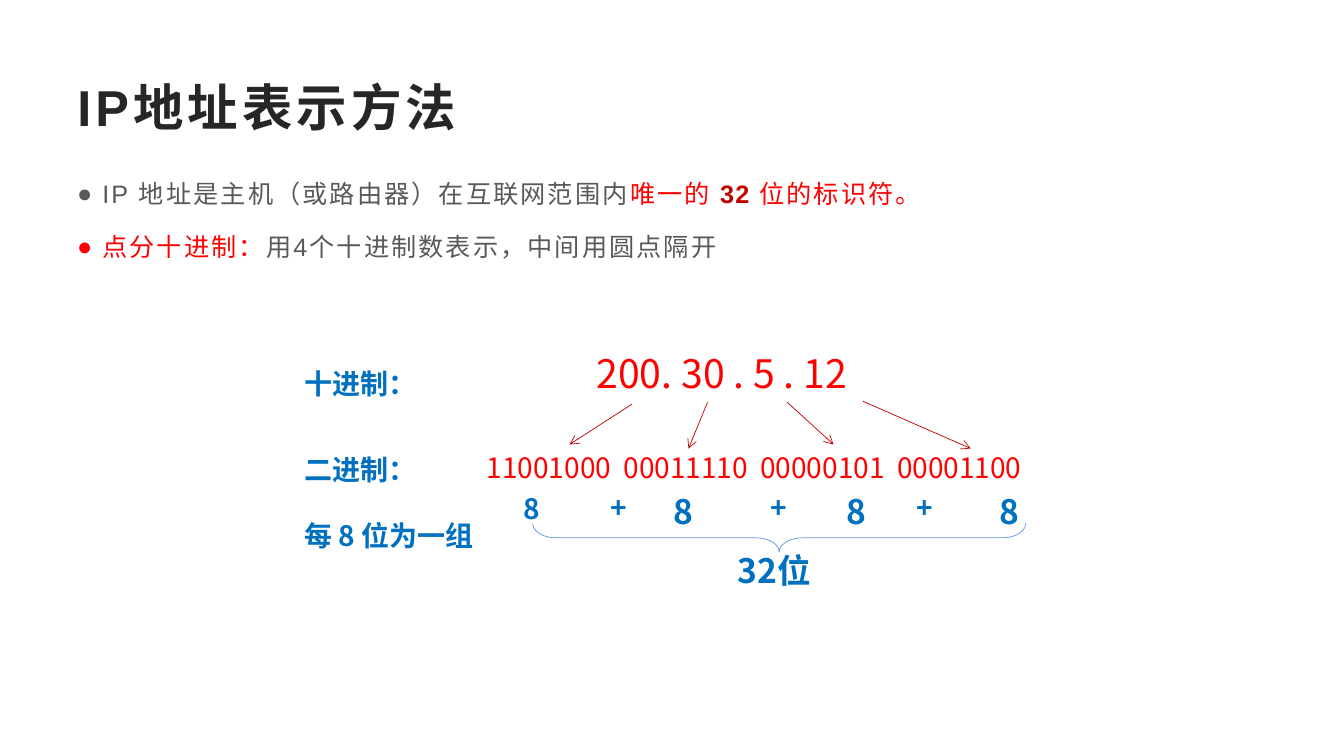
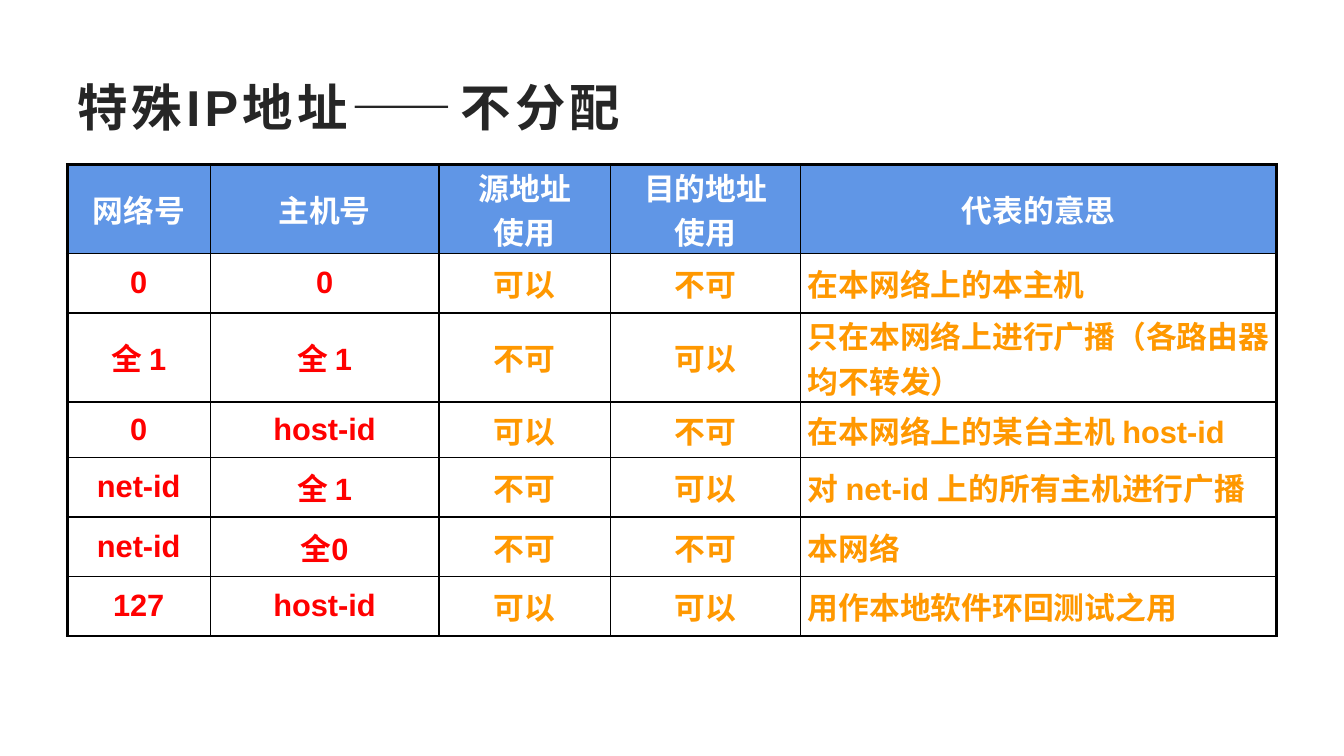
from lxml.etree import SubElement
from pptx import Presentation
from pptx.dml.color import RGBColor
from pptx.enum.shapes import MSO_CONNECTOR, MSO_SHAPE
from pptx.enum.text import MSO_ANCHOR, PP_ALIGN
from pptx.oxml.ns import qn
from pptx.util import Pt

RED, DARK_RED, BLUE, ORANGE = "FF0000", "C00000", "0070C0", "FF9800"
ACCENT, INK, GREY, WHITE, BLACK = "6096E6", "262626", "595959", "FFFFFF", "000000"
LATIN, CJK = "Arial", "Noto Sans CJK SC"
LEFT, CONTENT_TOP, CONTENT_W = 48, 117.4, 864

# Slide 1: each bullet is a list of (text, format)
BULLETS = [
    [("IP 地址是主机（或路由器）在互联网范围内", {"color": GREY}),
     ("唯一的 ", {"color": RED}),
     ("32 ", {"color": DARK_RED, "bold": True, "spacing": 1}),
     ("位的标识符。", {"color": RED})],
    [("点分十进制：", {"color": RED}),
     ("用4个十进制数表示，中间用圆点隔开", {"color": GREY})],
]
OCTETS = ["11001000", "00011110", "00000101", "00001100"]
OCTET_PITCH = 97.7
RED_TEXT = {"latin": CJK, "color": RED}
BLUE_TEXT = {"latin": CJK, "color": BLUE, "bold": True}
ROW_LABELS = [("十进制：", 246.2), ("二进制：", 307.4)]
# text, left, top, width, size
SUM_PARTS = [
    ("8", 366.5, 347.8, 35, 20), ("+", 429, 347, 35, 20),
    ("8", 473.8, 347, 70, 24), ("+", 543, 347, 35, 20),
    ("8", 597.6, 347, 35, 24), ("+", 647.3, 347, 35, 20),
    ("8", 707, 347, 35, 24), ("32位", 519.8, 389.5, 96, 24),
]
ARROWS = [
    (451.4, 288.7, 406.8, 317.5), (505.4, 287.3, 491.8, 320.4),
    (562.3, 287.3, 595.4, 317.5), (616.3, 286.6, 693.4, 320.4),
]

# Slide 2
HEADER = ["网络号", "主机号", "源地址\n使用", "目的地址\n使用", "代表的意思"]
ROWS = [
    ["0", "0", "可以", "不可", "在本网络上的本主机"],
    ["全 1", "全 1", "不可", "可以", "只在本网络上进行广播（各路由器均不转发）"],
    ["0", "host-id", "可以", "不可", "在本网络上的某台主机 host-id"],
    ["net-id", "全 1", "不可", "可以", "对 net-id 上的所有主机进行广播"],
    ["net-id", "全0", "不可", "不可", "本网络"],
    ["127", "host-id", "可以", "可以", "用作本地软件环回测试之用"],
]
COL_WIDTHS = [102.2, 163.4, 122.4, 136.1, 339.9]
ROW_HEIGHTS = [52.6, 42.5, 44.6, 39.6, 42.5, 42.5, 42.5]
COLUMN_COLORS = [RED, RED, ORANGE, ORANGE, ORANGE]


def rgb(value):
    return RGBColor.from_string(value)


def format_run(r, size, color, bold=False, latin=LATIN, spacing=0):
    for name, value in {"size": Pt(size), "bold": bold, "name": latin}.items():
        setattr(r.font, name, value)
    r.font.color.rgb = rgb(color)
    rPr = r.font._element
    if spacing:
        rPr.set("spc", str(round(spacing * 100)))
    SubElement(rPr, qn("a:ea"), typeface=CJK)


def add_run(p, text, **fmt):
    r = p.add_run()
    r.text = text
    format_run(r, **fmt)


def add_text(s, text, left, top, width, height, wrap=True, align=PP_ALIGN.LEFT,
             line_spacing=1, **fmt):
    tf = s.shapes.add_textbox(Pt(left), Pt(top), Pt(width), Pt(height)).text_frame
    tf.word_wrap = wrap
    p = tf.paragraphs[0]
    p.alignment, p.line_spacing = align, line_spacing
    add_run(p, text, **fmt)
    return p


def add_titled_slide(prs, text):
    s = prs.slides.add_slide(prs.slide_layouts[5])
    title = s.shapes.title
    box = {"left": LEFT, "top": 48, "width": CONTENT_W, "height": 55.4}
    for name, value in box.items():
        setattr(title, name, Pt(value))
    tf = title.text_frame
    tf.vertical_anchor = MSO_ANCHOR.MIDDLE
    p = tf.paragraphs[0]
    p.alignment = PP_ALIGN.LEFT
    add_run(p, text, size=36, color=INK, bold=True, spacing=3)
    return s


def add_bullets(s):
    tf = s.shapes.add_textbox(Pt(LEFT), Pt(CONTENT_TOP), Pt(CONTENT_W), Pt(374)).text_frame
    tf.word_wrap = True
    for i, parts in enumerate(BULLETS):
        p = tf.add_paragraph() if i else tf.paragraphs[0]
        p.line_spacing, p.space_after = 1.3, Pt(10)
        pPr = p._p.get_or_add_pPr()
        pPr.set("marL", str(Pt(18)))
        pPr.set("indent", str(-Pt(18)))
        SubElement(pPr, qn("a:buFont"), typeface=LATIN)
        SubElement(pPr, qn("a:buChar"), char="●")
        for text, fmt in parts:
            add_run(p, text, **{"size": 18, "spacing": 1.5, **fmt})


def add_arrow(s, x1, y1, x2, y2):
    line = s.shapes.add_connector(MSO_CONNECTOR.STRAIGHT, Pt(x1), Pt(y1), Pt(x2), Pt(y2))
    line.line.color.rgb = rgb(DARK_RED)
    line.line.width = Pt(0.5)
    SubElement(line.line._get_or_add_ln(), qn("a:tailEnd"), type="arrow")
    SubElement(line._element.spPr, qn("a:effectLst"))


def add_brace(s):
    brace = s.shapes.add_shape(MSO_SHAPE.LEFT_BRACE, Pt(546.5), Pt(208.1), Pt(20.2), Pt(352.1))
    brace.rotation = 270
    brace.adjustments[0], brace.adjustments[1] = 0.83, 0.5
    brace.shadow.inherit = False
    brace.fill.background()
    brace.line.color.rgb = rgb(ACCENT)
    brace.line.width = Pt(0.5)


def add_octets(s):
    p = add_text(s, "\t".join(OCTETS), 340.6, 318.2, 440, 31.7, size=20, **RED_TEXT)
    tabs = SubElement(p._p.get_or_add_pPr(), qn("a:tabLst"))
    for i in range(1, len(OCTETS)):
        SubElement(tabs, qn("a:tab"), pos=str(Pt(OCTET_PITCH * i)), algn="l")


def build_notation(prs):
    s = add_titled_slide(prs, "IP地址表示方法")
    add_bullets(s)
    add_octets(s)
    add_text(s, "200. 30 . 5 . 12", 419, 246.2, 237.6, 41, size=28, **RED_TEXT)
    for arrow in ARROWS:
        add_arrow(s, *arrow)
    for text, left, top, width, size in SUM_PARTS:
        add_text(s, text, left, top, width, size * 1.5, size=size, **BLUE_TEXT)
    add_brace(s)
    for text, top in ROW_LABELS:
        add_text(s, text, 210.2, top, 125.3, 40, line_spacing=1.5, size=20, **BLUE_TEXT)
    add_text(s, "每 8 位为一组", 178.6, 366.5, 198.7, 46, wrap=False,
             align=PP_ALIGN.CENTER, size=20, **BLUE_TEXT)


def set_borders(cell, outer):
    """Draw all four sides, thicker on those named in outer."""
    tcPr = cell._tc.get_or_add_tcPr()
    for side in "LRTB":
        ln = SubElement(tcPr, qn(f"a:ln{side}"), w=str(Pt(2.25 if side in outer else 1)))
        SubElement(SubElement(ln, qn("a:solidFill")), qn("a:srgbClr"), val=BLACK)


def build_special_addresses(prs):
    s = add_titled_slide(prs, "特殊IP地址——不分配")
    grid = [HEADER] + ROWS
    last_row, last_col = len(grid) - 1, len(HEADER) - 1
    table = s.shapes.add_table(len(grid), len(HEADER), Pt(LEFT), Pt(CONTENT_TOP),
                               Pt(CONTENT_W), Pt(sum(ROW_HEIGHTS))).table
    for column, width in zip(table.columns, COL_WIDTHS):
        column.width = Pt(width)
    for row, height in zip(table.rows, ROW_HEIGHTS):
        row.height = Pt(height)
    for i, texts in enumerate(grid):
        for j, text in enumerate(texts):
            cell = table.cell(i, j)
            edges = {"L": j == 0, "R": j == last_col, "T": i == 0, "B": i == last_row}
            set_borders(cell, [side for side, on_edge in edges.items() if on_edge])
            if i == 0:
                cell.fill.solid()
                cell.fill.fore_color.rgb = rgb(ACCENT)
            else:
                cell.fill.background()
            cell.vertical_anchor = MSO_ANCHOR.MIDDLE
            cell.margin_left = cell.margin_right = Pt(5)
            cell.margin_top = cell.margin_bottom = 0
            cell.text = text
            for p in cell.text_frame.paragraphs:
                p.alignment = PP_ALIGN.LEFT if i and j == last_col else PP_ALIGN.CENTER
                format_run(p.runs[0], size=22, bold=True,
                           color=COLUMN_COLORS[j] if i else WHITE)


def main():
    prs = Presentation()
    prs.slide_width, prs.slide_height = Pt(960), Pt(540)
    build_notation(prs)
    build_special_addresses(prs)
    prs.save("out.pptx")


if __name__ == "__main__":
    main()
